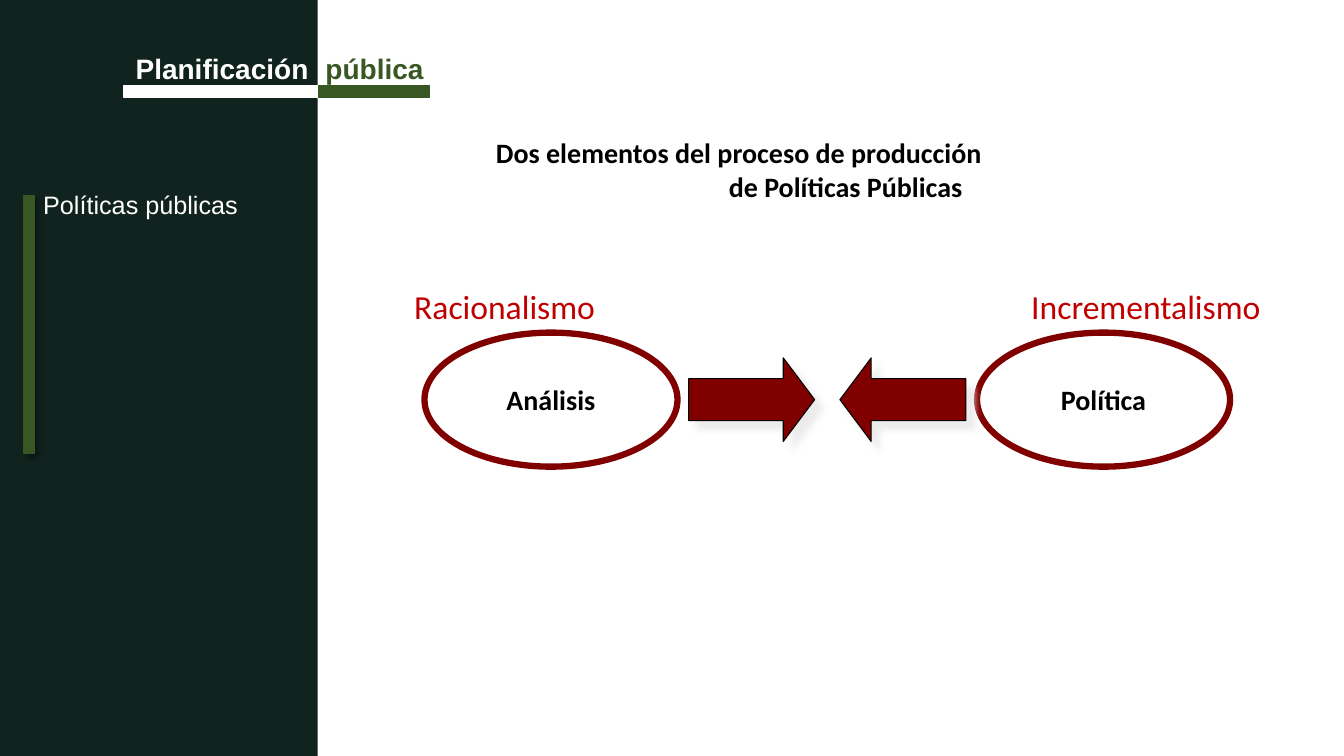
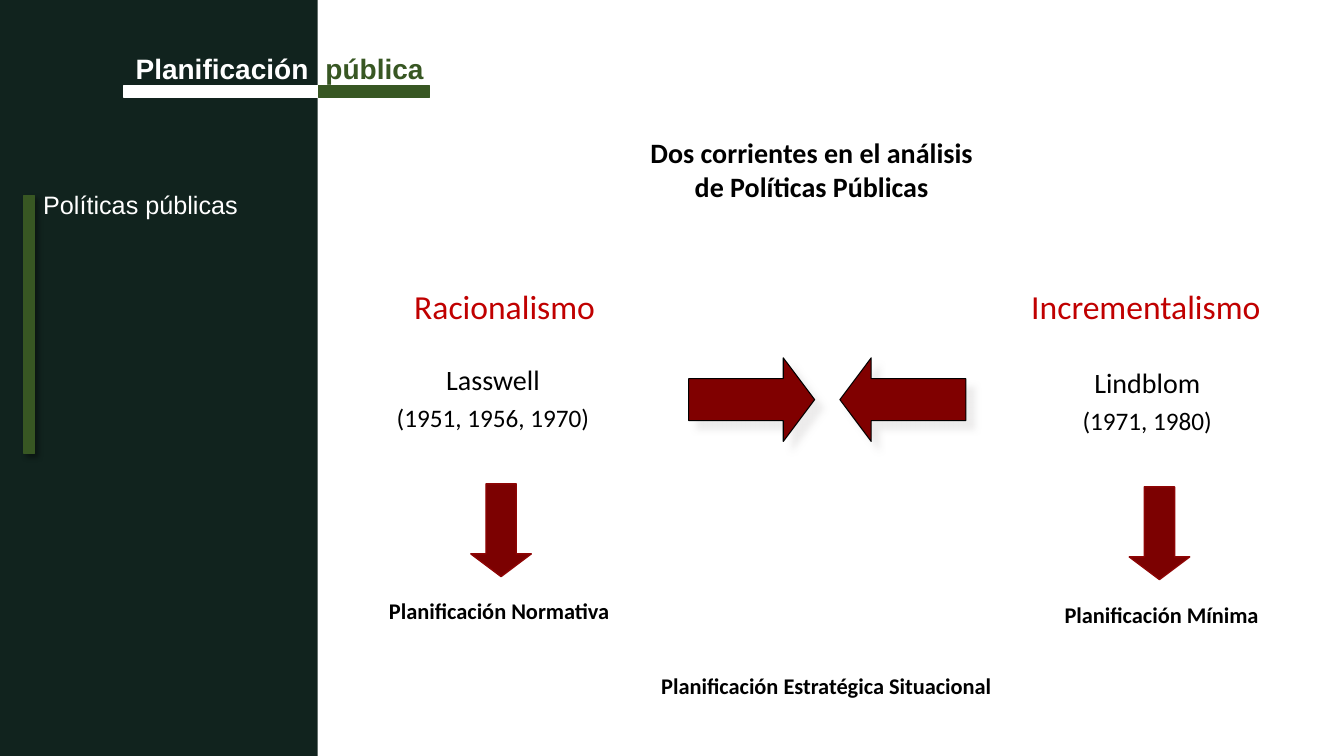
import pptx
import pptx.util
import pptx.dml.color
import pptx.enum.shapes
import pptx.enum.text
import pptx.oxml.ns
import lxml.etree

Inches = pptx.util.Inches
Pt = pptx.util.Pt
RGBColor = pptx.dml.color.RGBColor
SHAPE = pptx.enum.shapes.MSO_SHAPE
ALIGN = pptx.enum.text.PP_ALIGN
ANCHOR = pptx.enum.text.MSO_ANCHOR

# Colours
BLACK = RGBColor(0x00, 0x00, 0x00)
WHITE = RGBColor(0xFF, 0xFF, 0xFF)
SIDEBAR = RGBColor(0x11, 0x23, 0x1E)
GREEN = RGBColor(0x38, 0x57, 0x23)
RED = RGBColor(0xC0, 0x00, 0x00)
MAROON = RGBColor(0x80, 0x00, 0x00)
DARK_RED = RGBColor(0x7C, 0x01, 0x01)
DARK_RED_LINE = RGBColor(0x8E, 0x05, 0x05)
LIGHT_GREY = RGBColor(0xE7, 0xE6, 0xE6)

# Shadows: colour, opacity in percent, blur and distance in points
ARROW_SHADOW = (LIGHT_GREY, 75, 5, 8.5)
BAR_SHADOW = (BLACK, 40, 4, 3)

ARROW_ADJUSTMENTS = (0.5, 0.375)


def write_text(frame, text, sizes=(20,), color=BLACK, bold=False, font="Calibri",
               align=ALIGN.LEFT, anchor=ANCHOR.TOP, space_before=0, indents=(0,)):
    """Write one paragraph per line; sizes and indents repeat over the lines."""
    frame.word_wrap = True
    frame.vertical_anchor = anchor
    for index, line in enumerate(text.split("\n")):
        paragraph = frame.add_paragraph() if index else frame.paragraphs[0]
        paragraph.alignment = align
        paragraph.space_before = Pt(space_before)
        indent = indents[index % len(indents)]
        if indent:
            paragraph._p.get_or_add_pPr().set("marL", str(Inches(indent)))
        run = paragraph.add_run()
        run.text = line
        run.font.name = font
        run.font.size = Pt(sizes[index % len(sizes)])
        run.font.bold = bold
        run.font.color.rgb = color


def add_text(slide, text, left, top, width, height, **text_format):
    box = slide.shapes.add_textbox(Inches(left), Inches(top), Inches(width), Inches(height))
    write_text(box.text_frame, text, **text_format)


def add_shadow(shape, color, opacity, blur, distance):
    """Cast a shadow to the lower right."""
    effects = shape._element.spPr.find(pptx.oxml.ns.qn("a:effectLst"))
    shadow = lxml.etree.SubElement(
        effects, pptx.oxml.ns.qn("a:outerShdw"), blurRad=str(Pt(blur)),
        dist=str(Pt(distance)), dir="2700000", algn="tl", rotWithShape="0")
    tint = lxml.etree.SubElement(shadow, pptx.oxml.ns.qn("a:srgbClr"), val=str(color))
    lxml.etree.SubElement(tint, pptx.oxml.ns.qn("a:alpha"), val=str(opacity * 1000))


def add_shape(slide, kind, left, top, width, height, fill, line=None, line_width=1,
              shadow=None, adjustments=()):
    shape = slide.shapes.add_shape(kind, Inches(left), Inches(top),
                                   Inches(width), Inches(height))
    shape.shadow.inherit = False
    shape.fill.solid()
    shape.fill.fore_color.rgb = fill
    if line is None:
        shape.line.fill.background()
    else:
        shape.line.color.rgb = line
        shape.line.width = Pt(line_width)
    for index, value in enumerate(adjustments):
        shape.adjustments[index] = value
    if shadow:
        add_shadow(shape, *shadow)
    return shape


# Parts shared by both slides
def add_frame(slide):
    add_shape(slide, SHAPE.RECTANGLE, 0, 0, 3.15, 7.5, SIDEBAR)
    add_shape(slide, SHAPE.RECTANGLE, 0.24, 1.94, 0.1, 2.56, GREEN, GREEN, shadow=BAR_SHADOW)
    for left, width, color in ((1.23, 1.93, WHITE), (3.16, 1.1, GREEN)):
        add_shape(slide, SHAPE.RECTANGLE, left, 0.85, width, 0.12, color, color)
    course_format = dict(font="Arial", bold=True)
    add_text(slide, "Planificación", 1.03, 0.46, 2.13, 0.44, color=WHITE,
             align=ALIGN.RIGHT, **course_format)
    add_text(slide, "pública", 3.13, 0.46, 1.3, 0.44, color=GREEN, **course_format)
    add_text(slide, "Políticas públicas", 0.33, 1.83, 2.8, 0.4, sizes=(18,),
             color=WHITE, font="Arial")


def add_title(slide, text, **text_format):
    add_text(slide, text, 4.76, 1.18, 6.58, 1, bold=True, anchor=ANCHOR.MIDDLE, **text_format)


def add_opposition(slide):
    """Two opposed currents, with arrows that meet between them."""
    for text, left in (("Racionalismo", 4.01), ("Incrementalismo", 10.13)):
        add_text(slide, text, left, 2.79, 2.7, 0.5, sizes=(24,), color=RED)
    for kind, left in ((SHAPE.RIGHT_ARROW, 6.83), (SHAPE.LEFT_ARROW, 8.33)):
        add_shape(slide, kind, left, 3.55, 1.25, 0.83, MAROON, BLACK, 0.75,
                  ARROW_SHADOW, ARROW_ADJUSTMENTS)


def add_element(slide, text, left):
    ellipse = add_shape(slide, SHAPE.OVAL, left, 3.3, 2.51, 1.33, WHITE, MAROON, 4.5)
    write_text(ellipse.text_frame, text, bold=True, align=ALIGN.CENTER, anchor=ANCHOR.MIDDLE)


def add_planning(slide, text, left, top, width):
    add_text(slide, text, left, top, width, 0.37, sizes=(16,), bold=True)


def add_current(slide, author, planning, left, top, width, arrow_left):
    """An author with dates, and an arrow down to the resulting planning."""
    add_text(slide, author, left, top, width, 0.8, sizes=(20, 18),
             align=ALIGN.CENTER, space_before=4)
    add_shape(slide, SHAPE.DOWN_ARROW, arrow_left, top + 1.25, 0.6, 0.92, DARK_RED,
              DARK_RED_LINE, adjustments=ARROW_ADJUSTMENTS)
    add_planning(slide, planning, left, top + 2.33, 2.83)


def build_elements_slide(slide):
    add_title(slide, "Dos elementos del proceso de producción\nde Políticas Públicas",
              indents=(0.06, 2.37))
    add_element(slide, "Análisis", 4.21)
    add_element(slide, "Política", 9.69)
    add_opposition(slide)


def build_currents_slide(slide):
    add_title(slide, "Dos corrientes en el análisis\nde Políticas Públicas", align=ALIGN.CENTER)
    add_opposition(slide)
    add_current(slide, "Lasswell\n(1951, 1956, 1970)", "Planificación Normativa",
                3.76, 3.55, 2.26, 4.67)
    add_current(slide, "Lindblom\n(1971, 1980)", "Planificación Mínima",
                10.46, 3.58, 1.84, 11.2)
    add_planning(slide, "Planificación Estratégica Situacional", 6.46, 6.62, 3.67)


def main():
    presentation = pptx.Presentation()
    presentation.slide_width = Inches(13.33)
    presentation.slide_height = Inches(7.5)
    for build in (build_elements_slide, build_currents_slide):
        slide = presentation.slides.add_slide(presentation.slide_layouts[6])
        build(slide)
        add_frame(slide)
    presentation.save("out.pptx")


if __name__ == "__main__":
    main()
